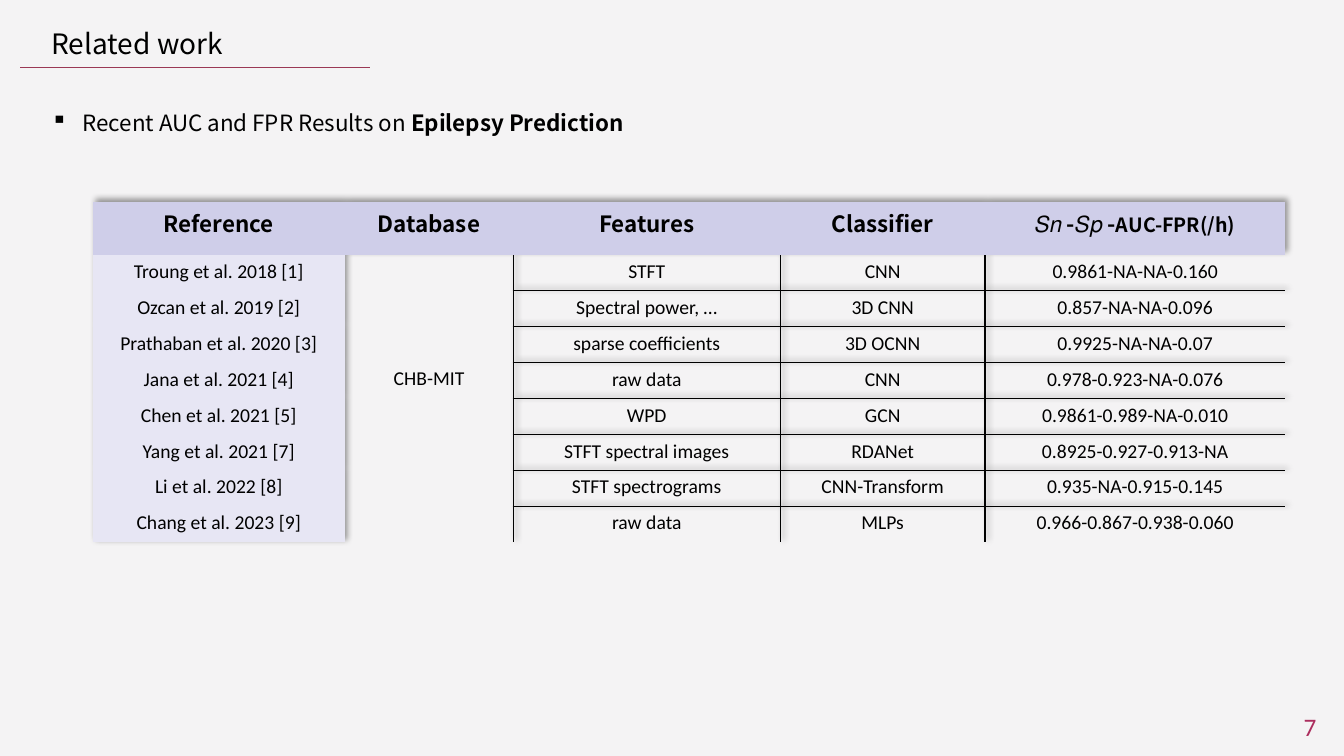
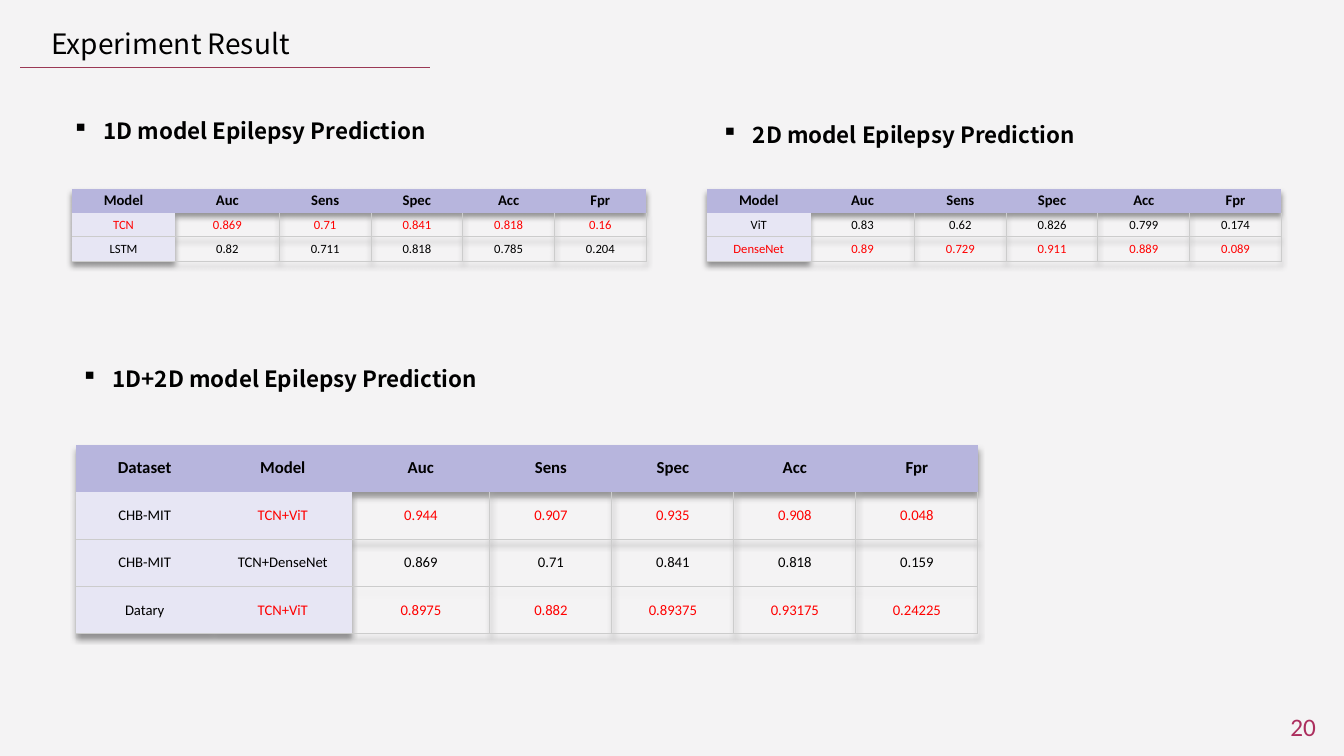
from lxml import etree
from pptx import Presentation
from pptx.dml.color import RGBColor
from pptx.enum import text
from pptx.oxml import parse_xml
from pptx.oxml.ns import nsdecls, qn
from pptx.util import Inches, Pt

BACKGROUND = RGBColor(0xF4, 0xF3, 0xF4)
BLACK = RGBColor(0x00, 0x00, 0x00)
RED = RGBColor(0xFF, 0x00, 0x00)
RULE = RGBColor(0x9A, 0x38, 0x54)
NUMBER = RGBColor(0xAC, 0x2E, 0x5E)
GRAY = RGBColor(0xCC, 0xCC, 0xCC)
HEADER_LIGHT = RGBColor(0xCF, 0xCE, 0xE9)
HEADER_DARK = RGBColor(0xB7, 0xB5, 0xDD)
LABEL = RGBColor(0xE7, 0xE6, 0xF4)
HEADING_FONT = "Noto Sans CJK SC"
BODY_FONT = "Calibri"
PLAIN_TABLE = "{2D5ABB26-0587-4C30-8999-92F81FD0307C}"


def set_font(font, name, size, color=BLACK, bold=False):
    font.name = name
    font.size = Pt(size)
    font.color.rgb = color
    font.bold = bold


def add_grid(slide, left, top, widths, heights, rows, header_fill, header_font, sizes,
             line, shadow_angle, labels=1, red_rows=(), ruled_from=0, framed=True, insets=None):
    frame = slide.shapes.add_table(len(rows), len(widths), Inches(left), Inches(top),
                                   Inches(sum(widths)), Inches(sum(heights)))
    grid = frame.table
    properties = grid._tbl.tblPr
    properties.find(qn("a:tableStyleId")).text = PLAIN_TABLE
    properties.insert(0, parse_xml(
        f'<a:effectLst {nsdecls("a")}><a:outerShdw blurRad="{Pt(4)}" dist="{Pt(3)}" '
        f'dir="{shadow_angle * 60000}" algn="ctr" rotWithShape="0"><a:srgbClr val="000000">'
        '<a:alpha val="40000"/></a:srgbClr></a:outerShdw></a:effectLst>'))
    for column, width in zip(grid.columns, widths):
        column.width = Inches(width)
    for row, height in zip(grid.rows, heights):
        row.height = Inches(height)
    last_row, last_column = len(rows) - 1, len(widths) - 1
    color, weight = line
    for r, values in enumerate(rows):
        for c, value in enumerate(values):
            cell = grid.cell(r, c)
            borders = {
                "lnL": r > 0 and c > labels,
                "lnR": r > 0 and c >= labels and (framed or c < last_column),
                "lnT": r > 1 and c >= ruled_from,
                "lnB": r > 0 and c >= ruled_from and (framed or r < last_row),
            }
            for side, drawn in borders.items():
                if drawn:
                    cell._tc.get_or_add_tcPr().append(parse_xml(
                        f'<a:{side} {nsdecls("a")} w="{Pt(weight)}"><a:solidFill>'
                        f'<a:srgbClr val="{color}"/></a:solidFill></a:{side}>'))
            if r == 0 or c < labels:
                cell.fill.solid()
                cell.fill.fore_color.rgb = LABEL if r else header_fill
            else:
                cell.fill.background()
            if insets:
                cell.margin_left = cell.margin_right = Inches(insets[0])
                cell.margin_top = cell.margin_bottom = Inches(insets[1])
                cell.vertical_anchor = text.MSO_ANCHOR.MIDDLE
            cell.text = value
            paragraph = cell.text_frame.paragraphs[0]
            paragraph.alignment = text.PP_ALIGN.CENTER
            ink = RED if r in red_rows and c >= labels - 1 else BLACK
            set_font(paragraph.font, BODY_FONT if r else header_font,
                     sizes[1] if r else sizes[0], ink, r == 0)
    return grid


prs = Presentation()
prs.slide_width, prs.slide_height = Inches(13.33), Inches(7.5)
master_fill = prs.slide_master.background.fill
master_fill.solid()
master_fill.fore_color.rgb = BACKGROUND

pages = [
    ("Related work", "7", 12.83, 3.67,
     [(0.41, 1.03, 6.95, [("Recent AUC and FPR Results on ", False), ("Epilepsy Prediction", True)])]),
    ("Experiment Result", "20", 12.7, 4.27,
     [(0.62, 1.11, 4.96, [("1D model Epilepsy Prediction", True)]),
      (7.06, 1.15, 4.96, [("2D model Epilepsy Prediction", True)]),
      (0.71, 3.57, 4.96, [("1D+2D model Epilepsy Prediction", True)])]),
]

for heading, number, number_left, rule_end, bullets in pages:
    slide = prs.slides.add_slide(prs.slide_layouts[5])
    title = slide.shapes.title
    title.left, title.top, title.width, title.height = map(Inches, (0.41, 0.09, 5.27, 0.73))
    title.text_frame.text = heading
    title.text_frame.vertical_anchor = text.MSO_ANCHOR.MIDDLE
    title_line = title.text_frame.paragraphs[0]
    title_line.alignment = text.PP_ALIGN.LEFT
    title_line.line_spacing = 0.9
    set_font(title_line.font, HEADING_FONT, 20)

    page_number = slide.shapes.add_textbox(Inches(number_left), Inches(7.01), Inches(0.49), Inches(0.4))
    page_number.text_frame.text = number
    set_font(page_number.text_frame.paragraphs[0].font, BODY_FONT, 18, NUMBER)

    underline = slide.shapes.add_connector(1, Inches(0.2), Inches(0.67), Inches(rule_end), Inches(0.67))
    underline.line.color.rgb = RULE
    underline.line.width = Pt(1)
    etree.SubElement(underline._element.spPr, qn("a:effectLst"))

    for left, top, width, parts in bullets:
        bullet = slide.shapes.add_textbox(Inches(left), Inches(top), Inches(width), Inches(0.37))
        bullet.text_frame.word_wrap = True
        paragraph = bullet.text_frame.paragraphs[0]
        set_font(paragraph.font, HEADING_FONT, 16)
        indent = paragraph._p.get_or_add_pPr()
        indent.set("marL", str(Inches(0.31)))
        indent.set("indent", str(-Inches(0.31)))
        indent.insert(0, parse_xml(f'<a:buChar {nsdecls("a")} char="▪"/>'))
        for words, bold in parts:
            run = paragraph.add_run()
            run.text = words
            run.font.bold = bold

related_work, experiment = prs.slides

studies = [
    ("Reference", "Database", "Features", "Classifier", "𝑆𝑛 -𝑆𝑝 -"),
    ("Troung et al. 2018 [1]", "CHB-MIT", "STFT", "CNN", "0.9861-NA-NA-0.160"),
    ("Ozcan et al. 2019 [2]", "", "Spectral power, …", "3D CNN", "0.857-NA-NA-0.096"),
    ("Prathaban et al. 2020 [3]", "", "sparse coefficients", "3D OCNN", "0.9925-NA-NA-0.07"),
    ("Jana et al. 2021 [4]", "", "raw data", "CNN", "0.978-0.923-NA-0.076"),
    ("Chen et al. 2021 [5]", "", "WPD", "GCN", "0.9861-0.989-NA-0.010"),
    ("Yang et al. 2021 [7]", "", "STFT spectral images", "RDANet", "0.8925-0.927-0.913-NA"),
    ("Li et al. 2022 [8]", "", "STFT spectrograms", "CNN-Transform", "0.935-NA-0.915-0.145"),
    ("Chang et al. 2023 [9]", "", "raw data", "MLPs", "0.966-0.867-0.938-0.060"),
]
study_grid = add_grid(related_work, 0.92, 2, [2.5, 1.67, 2.65, 2.03, 2.98], [0.53] + [0.356] * 8,
                      studies, HEADER_LIGHT, HEADING_FONT, (16, 14), (BLACK, 1), 315,
                      ruled_from=2, framed=False)
database = study_grid.cell(1, 1)
database.merge(study_grid.cell(8, 1))
database.vertical_anchor = text.MSO_ANCHOR.MIDDLE
database.margin_bottom = Inches(0.45)
measures = study_grid.cell(0, 4).text_frame.paragraphs[0].add_run()
measures.text = "AUC-FPR(/h)"
measures.font.size = Pt(14)

METRICS = ("Auc", "Sens", "Spec", "Acc", "Fpr")
single_models = [
    (0.71, 1, [("TCN", "0.869", "0.71", "0.841", "0.818", "0.16"),
               ("LSTM", "0.82", "0.711", "0.818", "0.785", "0.204")]),
    (7.01, 2, [("ViT", "0.83", "0.62", "0.826", "0.799", "0.174"),
               ("DenseNet", "0.89", "0.729", "0.911", "0.889", "0.089")]),
]
for left, best, results in single_models:
    add_grid(experiment, left, 1.87, [1.03] * 2 + [0.91] * 4, [0.24] * 3,
             [("Model", *METRICS), *results], HEADER_DARK, BODY_FONT, (10.5, 9),
             (GRAY, 0.75), 90, red_rows=[best], insets=(0.03, 0))

combined = [
    ("Dataset", "Model", *METRICS),
    ("CHB-MIT", "TCN+ViT", "0.944", "0.907", "0.935", "0.908", "0.048"),
    ("CHB-MIT", "TCN+DenseNet", "0.869", "0.71", "0.841", "0.818", "0.159"),
    ("Datary", "TCN+ViT", "0.8975", "0.882", "0.89375", "0.93175", "0.24225"),
]
add_grid(experiment, 0.75, 4.41, [1.37] * 3 + [1.21] * 4, [0.47] * 4, combined,
         HEADER_DARK, BODY_FONT, (12, 10.5), (GRAY, 0.75), 90,
         labels=2, red_rows=[1, 3], insets=(0.03, 0))

prs.save("out.pptx")
